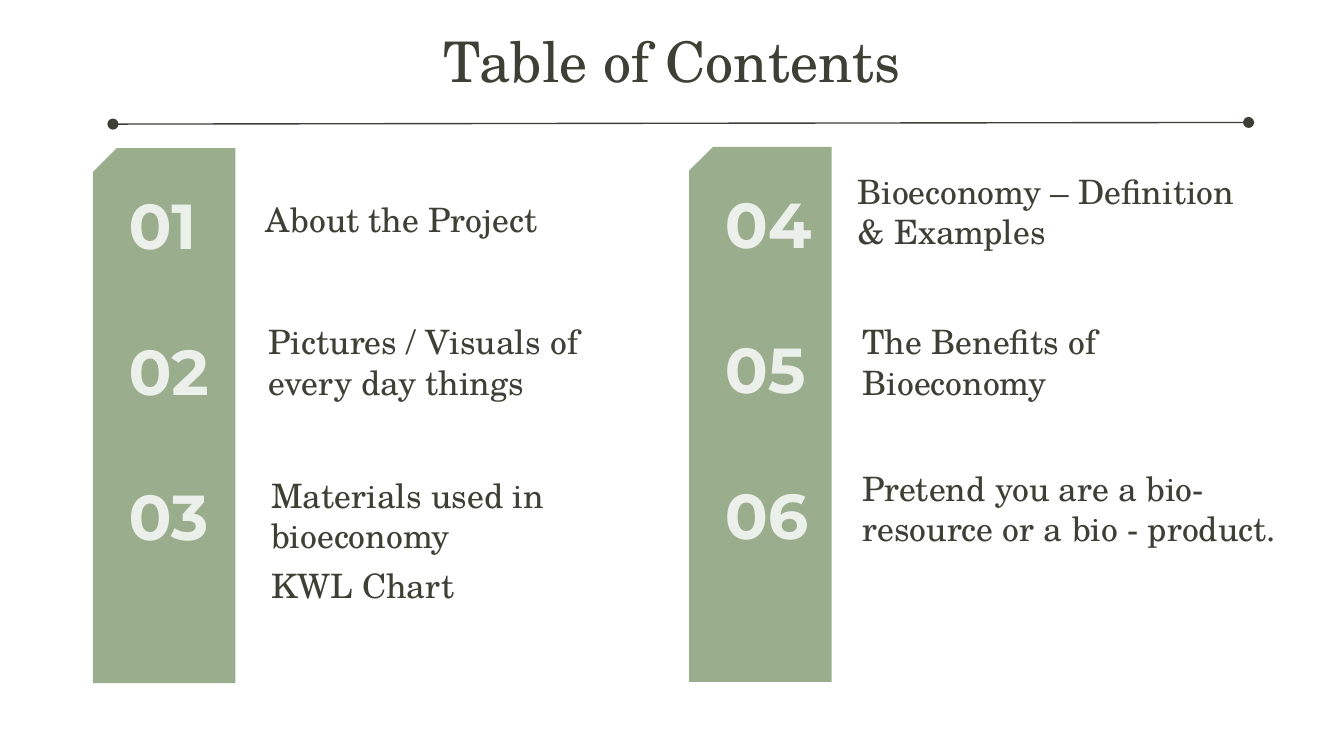
"""Build the Table of Contents slide."""
from lxml.etree import SubElement
from pptx import Presentation
from pptx.dml.color import RGBColor
from pptx.enum.shapes import MSO_CONNECTOR, MSO_SHAPE
from pptx.enum.text import MSO_ANCHOR, MSO_AUTO_SIZE, PP_ALIGN
from pptx.oxml.ns import qn
from pptx.util import Pt


class Deck:
    colors = {"ink": "3E4035", "sage": "9AAE8E", "pale": "ECF0EA"}
    serif = "TeX Gyre Schola"
    sans = "Montserrat"

    def __init__(self, width, height):
        self.prs = Presentation()
        self.prs.slide_width, self.prs.slide_height = Pt(width), Pt(height)
        self.slide = self.prs.slides.add_slide(self.prs.slide_layouts[5])

    def color(self, name):
        return RGBColor.from_string(self.colors[name])

    def set_text(self, sp, text, size, font, color, bold=False,
                 align=PP_ALIGN.LEFT, anchor=MSO_ANCHOR.BOTTOM):
        tf = sp.text_frame
        tf.word_wrap = True
        tf.auto_size = MSO_AUTO_SIZE.NONE
        tf.vertical_anchor = anchor
        tf.margin_left = tf.margin_right = Pt(7.2)
        tf.margin_top = tf.margin_bottom = Pt(7.2)
        p = tf.paragraphs[0]
        p.alignment = align
        r = p.add_run()
        r.text = text
        r.font.size, r.font.name, r.font.bold = Pt(size), font, bold
        r.font.color.rgb = self.color(color)

    def title(self, text, x, y, w, h):
        sp = self.slide.shapes.title
        sp.left, sp.top, sp.width, sp.height = Pt(x), Pt(y), Pt(w), Pt(h)
        self.set_text(sp, text, 30, self.serif, "ink",
                      align=PP_ALIGN.CENTER, anchor=MSO_ANCHOR.TOP)

    def band(self, x, y, w, h):
        sp = self.slide.shapes.add_shape(
            MSO_SHAPE.SNIP_1_RECTANGLE, Pt(x), Pt(y), Pt(w), Pt(h))
        sp.adjustments[0] = 0.167
        sp.shadow.inherit = False
        sp.fill.solid()
        sp.fill.fore_color.rgb = self.color("sage")
        sp.line.fill.background()
        sp._element.spPr.find(qn("a:xfrm")).set("flipH", "1")

    def number(self, text, x, y):
        sp = self.slide.shapes.add_textbox(Pt(x), Pt(y), Pt(64.8), Pt(51.8))
        self.set_text(sp, text, 34, self.sans, "pale", bold=True)

    def label(self, text, x, y, w=216.7, h=46.1):
        sp = self.slide.shapes.add_textbox(Pt(x), Pt(y), Pt(w), Pt(h))
        self.set_text(sp, text, 18, self.serif, "ink")

    def rule(self, x1, y1, x2, y2):
        line = self.slide.shapes.add_connector(
            MSO_CONNECTOR.STRAIGHT, Pt(x1), Pt(y1), Pt(x2), Pt(y2))
        line.line.color.rgb = self.color("ink")
        line.line.width = Pt(0.75)
        ln = line._element.spPr.find(qn("a:ln"))
        for end in ("a:headEnd", "a:tailEnd"):
            SubElement(ln, qn(end), type="oval")
        SubElement(line._element.spPr, qn("a:effectLst"))


def main():
    deck = Deck(720, 405)
    deck.title("Table of Contents", 43.2, 7.2, 633.6, 72)
    deck.rule(60.5, 66.5, 668.9, 65.6)

    columns = [
        (49.8, 79.4, [("About the Project", 135.4, 89.3, 216.7),
                      ("Pictures / Visuals of every day things", 136.8, 176.4, 216.7),
                      ("Materials used in bioeconomy", 138.2, 258.5, 216.7)]),
        (369.2, 78.7, [("Bioeconomy – Definition & Examples", 452.2, 95.8, 216.7),
                       ("The Benefits of Bioeconomy", 455, 176.4, 216.7),
                       ("Pretend you are a bio-resource or a bio - product.",
                        455, 254.9, 252)]),
    ]
    for col, (x, y, topics) in enumerate(columns):
        deck.band(x, y, 76.3, 286.6)
        for row, (text, left, top, width) in enumerate(topics):
            number = col * len(topics) + row + 1
            deck.number(f"{number:02d}", x + 12, y + 16.4 + 78.1 * row)
            deck.label(text, left, top, width)
    deck.label("KWL Chart", 138.2, 298.1, h=33.1)
    deck.prs.save("out.pptx")


if __name__ == "__main__":
    main()
